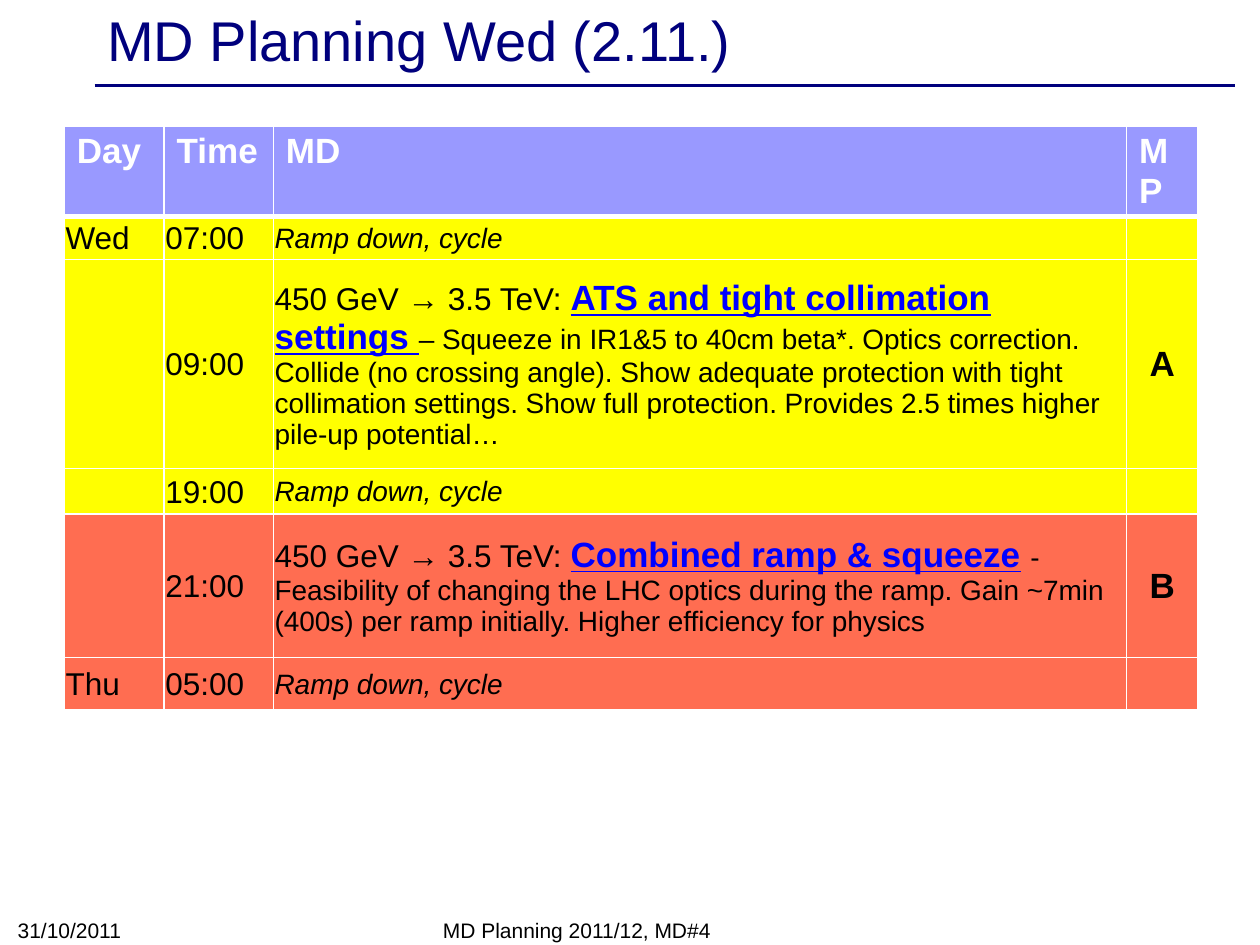
import dataclasses

import lxml.etree
import pptx
import pptx.dml.color
import pptx.enum.text
import pptx.oxml.ns
import pptx.util

Pt = pptx.util.Pt
Anchor = pptx.enum.text.MSO_ANCHOR
Align = pptx.enum.text.PP_ALIGN


@dataclasses.dataclass(frozen=True)
class Theme:
    font: str = "Arial"
    navy: str = "00007D"
    white: str = "FFFFFF"
    black: str = "000000"
    topic: str = "0000FF"
    header: str = "9999FF"
    yellow: str = "FFFF00"
    red: str = "FF6D51"
    title_size: int = 32
    topic_size: int = 20
    body_size: int = 18
    detail_size: int = 16
    footer_size: int = 12


THEME = Theme()
COLUMN_WIDTHS = (57, 62.5, 487.5, 41)
HEADINGS = ("Day", "Time", "MD", "MP")
HEADING_HEIGHT = 29.5
ENERGY = "450 GeV → 3.5 TeV: "
RAMP_DOWN = "Ramp down, cycle"
SCHEDULE = (
    (24.5, THEME.yellow, "Wed", "07:00", None, ""),
    (119.5, THEME.yellow, "", "09:00", (
        "ATS and tight collimation settings ", "",
        "– Squeeze in IR1&5 to 40cm beta*. Optics correction. Collide (no crossing angle). "
        "Show adequate protection with tight collimation settings. Show full protection. "
        "Provides 2.5 times higher pile-up potential…"), "A"),
    (26, THEME.yellow, "", "19:00", None, ""),
    (82, THEME.red, "", "21:00", (
        "Combined ramp & squeeze", " ",
        "- Feasibility of changing the LHC optics during the ramp. "
        "Gain ~7min (400s) per ramp initially. Higher efficiency for physics"), "B"),
    (30, THEME.red, "Thu", "05:00", None, ""),
)


def rgb(color):
    return pptx.dml.color.RGBColor.from_string(color)


def style_font(font, size, color=THEME.black, bold=False, italic=False):
    font.name = THEME.font
    font.size = Pt(size)
    font.color.rgb = rgb(color)
    font.bold = bold
    font.italic = italic


def write(para, text, size, color=THEME.black, bold=False, italic=False):
    para.text = text
    style_font(para.font, size, color, bold, italic)


def add_title(page, text):
    title = page.shapes.title
    title.left, title.top, title.width, title.height = Pt(54), Pt(2), Pt(648), Pt(41)
    title.text_frame.vertical_anchor = Anchor.MIDDLE
    para = title.text_frame.paragraphs[0]
    write(para, text, THEME.title_size, THEME.navy)
    para.alignment = Align.LEFT


def add_rule(page, left, right, top):
    rule = page.shapes.add_connector(1, Pt(left), Pt(top), Pt(right), Pt(top))
    rule.line.color.rgb = rgb(THEME.navy)
    rule.line.width = Pt(2)
    properties = rule._element.spPr
    lxml.etree.SubElement(properties, pptx.oxml.ns.qn("a:effectLst"))


def add_footer(page, text, left, width):
    box = page.shapes.add_textbox(Pt(left), Pt(521.5), Pt(width), Pt(20.5))
    box.text_frame.word_wrap = True
    box.text_frame.vertical_anchor = Anchor.BOTTOM
    write(box.text_frame.paragraphs[0], text, THEME.footer_size)


def format_cell(cell, fill, bottom_width=1):
    properties = cell._tc.get_or_add_tcPr()
    widths = {"a:lnL": 1, "a:lnR": 1, "a:lnT": 1, "a:lnB": bottom_width}
    for side, width in widths.items():
        line = lxml.etree.SubElement(properties, pptx.oxml.ns.qn(side), w=str(Pt(width)))
        solid = lxml.etree.SubElement(line, pptx.oxml.ns.qn("a:solidFill"))
        lxml.etree.SubElement(solid, pptx.oxml.ns.qn("a:srgbClr"), val=THEME.white)
    cell.fill.solid()
    cell.fill.fore_color.rgb = rgb(fill)


def format_body_cell(cell, fill):
    format_cell(cell, fill)
    cell.vertical_anchor = Anchor.MIDDLE
    cell.margin_left = cell.margin_right = cell.margin_top = Pt(0.75)
    cell.margin_bottom = 0


def write_study(para, study):
    topic, gap, detail = study
    spans = (
        (ENERGY, THEME.detail_size + 2, THEME.black, False),
        (topic, THEME.topic_size, THEME.topic, True),
        (gap, THEME.topic_size, THEME.black, False),
        (detail, THEME.detail_size, THEME.black, False),
    )
    for text, size, color, is_topic in spans:
        if text:
            span = para.add_run()
            span.text = text
            style_font(span.font, size, color, bold=is_topic)
            span.font.underline = is_topic


def fill_row(cells, fill, day, time, study, priority):
    for cell in cells:
        format_body_cell(cell, fill)
    day_para, time_para, study_para, priority_para = (
        cell.text_frame.paragraphs[0] for cell in cells)
    write(day_para, day, THEME.body_size)
    write(time_para, time, THEME.body_size)
    if study:
        write_study(study_para, study)
    else:
        write(study_para, RAMP_DOWN, THEME.detail_size, italic=True)
    write(priority_para, priority, THEME.topic_size, bold=True)
    priority_para.alignment = Align.CENTER


def add_schedule(page):
    heights = [HEADING_HEIGHT] + [entry[0] for entry in SCHEDULE]
    frame = page.shapes.add_table(
        len(heights), len(COLUMN_WIDTHS), Pt(36.75), Pt(72),
        Pt(sum(COLUMN_WIDTHS)), Pt(sum(heights)))
    table = frame.table
    table.first_row = table.horz_banding = False
    for column, width in zip(table.columns, COLUMN_WIDTHS):
        column.width = Pt(width)
    for row, height in zip(table.rows, heights):
        row.height = Pt(height)
    rows = [list(row.cells) for row in table.rows]
    for cell, heading in zip(rows[0], HEADINGS):
        format_cell(cell, THEME.header, bottom_width=3)
        write(cell.text_frame.paragraphs[0], heading, THEME.topic_size, THEME.white, bold=True)
    for cells, entry in zip(rows[1:], SCHEDULE):
        fill_row(cells, *entry[1:])


def main():
    deck = pptx.Presentation()
    deck.slide_width, deck.slide_height = Pt(720), Pt(540)
    page = deck.slides.add_slide(deck.slide_layouts[5])
    add_rule(page, 54, 705.6, 49)
    add_title(page, "MD Planning Wed (2.11.)")
    add_schedule(page)
    add_footer(page, "MD Planning 2011/12, MD#4", 246, 228)
    add_footer(page, "31/10/2011", 3, 168)
    deck.save("out.pptx")


if __name__ == "__main__":
    main()
